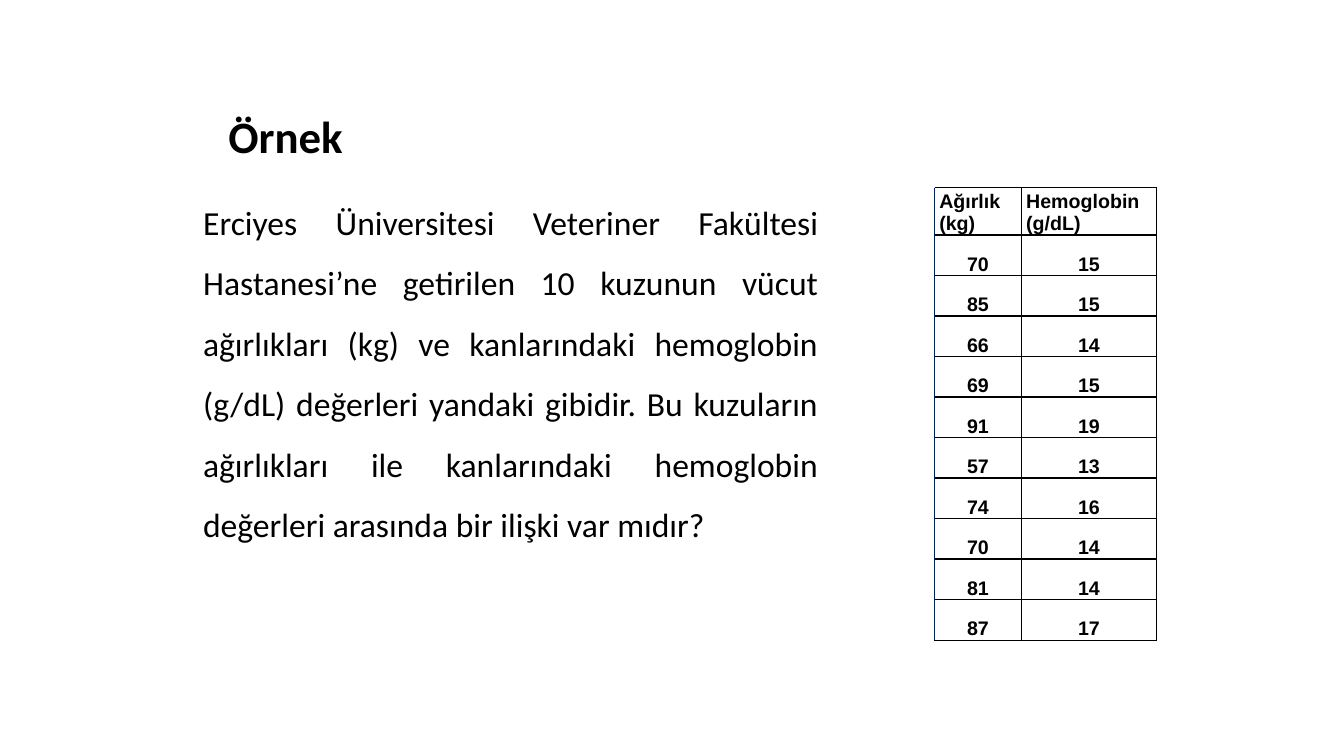
from lxml import etree
from pptx import Presentation
from pptx import util as u
from pptx.dml.color import RGBColor
from pptx.enum import shapes, text
from pptx.oxml import ns

COLORS = {"text": "000000", "grid": "000000", "edge": "002060", "background": "FFFFFF"}
HEADINGS = ("Ağırlık (kg)", "Hemoglobin (g/dL)")
LAMBS = [(70, 15), (85, 15), (66, 14), (69, 15), (91, 19),
         (57, 13), (74, 16), (70, 14), (81, 14), (87, 17)]
QUESTION = (
    "Erciyes Üniversitesi Veteriner Fakültesi Hastanesi’ne getirilen 10 kuzunun "
    "vücut ağırlıkları (kg) ve kanlarındaki hemoglobin (g/dL) değerleri yandaki "
    "gibidir. Bu kuzuların ağırlıkları ile kanlarındaki hemoglobin değerleri "
    "arasında bir ilişki var mıdır?"
)


def rgb(name):
    return RGBColor.from_string(COLORS[name])


def write(frame, content, size, font="Calibri", bold=False,
          align=text.PP_ALIGN.LEFT, line_spacing=1.0, space_before=0):
    paragraph = frame.paragraphs[0]
    paragraph.alignment = align
    paragraph.line_spacing = line_spacing
    paragraph.space_before = u.Pt(space_before)
    run = paragraph.add_run()
    run.text = content
    run.font.size = u.Pt(size)
    run.font.name = font
    run.font.bold = bold
    run.font.color.rgb = rgb("text")


def add_title(slide, left, top, width, height):
    title = slide.shapes.title
    title.left, title.top, title.width, title.height = left, top, width, height
    title.text_frame.vertical_anchor = text.MSO_ANCHOR.MIDDLE
    write(title.text_frame, "Örnek", 32, bold=True, line_spacing=0.9)


def add_question(slide, left, top, width, height):
    frame = slide.shapes.add_textbox(left, top, width, height).text_frame
    frame.word_wrap = True
    frame.margin_left = u.Cm(0.89)
    write(frame, QUESTION, 24, align=text.PP_ALIGN.JUSTIFY,
          line_spacing=1.5, space_before=10)


def set_borders(cell, sides):
    properties = cell._tc.get_or_add_tcPr()
    for position, side in enumerate(sides):
        border = etree.Element(ns.qn(f"a:ln{side}"), w=str(u.Pt(1)))
        fill = etree.SubElement(border, ns.qn("a:solidFill"))
        etree.SubElement(fill, ns.qn("a:srgbClr"), val=COLORS["grid"])
        properties.insert(position, border)


def add_measurements(slide, left, top, width, height):
    rows = [HEADINGS, *LAMBS]
    table = slide.shapes.add_table(len(rows), 2, left, top, width, height).table
    table.first_row = table.horz_banding = False
    table.columns[0].width = u.Cm(2.19)
    table.columns[1].width = width - u.Cm(2.19)
    header_height = u.Cm(1.19)
    for index, values in enumerate(rows):
        is_header = index == 0
        table.rows[index].height = (
            header_height if is_header else (height - header_height) // len(LAMBS))
        for column, value in enumerate(values):
            cell = table.cell(index, column)
            cell.fill.background()
            cell.vertical_anchor = text.MSO_ANCHOR.BOTTOM
            cell.margin_left = cell.margin_right = u.Cm(0.12)
            cell.margin_top = cell.margin_bottom = 0
            align = text.PP_ALIGN.LEFT if is_header else text.PP_ALIGN.CENTER
            write(cell.text_frame, str(value), 14, font="Arial", bold=True, align=align)
            set_borders(cell, "RTB" if column == 0 else "LRTB")

    edge = slide.shapes.add_connector(
        shapes.MSO_CONNECTOR.STRAIGHT, left, top, left, top + height)
    edge.line.color.rgb = rgb("edge")
    edge.line.width = u.Pt(0.5)
    etree.SubElement(edge._element.spPr, ns.qn("a:effectLst"))


def main():
    presentation = Presentation()
    presentation.slide_width = u.Cm(33.87)
    presentation.slide_height = u.Cm(19.05)
    slide = presentation.slides.add_slide(presentation.slide_layouts[5])
    slide.background.fill.solid()
    slide.background.fill.fore_color.rgb = rgb("background")
    add_title(slide, u.Cm(5.5), u.Cm(1.9), u.Cm(22.86), u.Cm(3.18))
    add_question(slide, u.Cm(4.23), u.Cm(4.45), u.Cm(16.64), u.Cm(12.57))
    add_measurements(slide, u.Cm(23.55), u.Cm(4.73), u.Cm(5.6), u.Cm(11.4))
    presentation.save("out.pptx")


if __name__ == "__main__":
    main()
